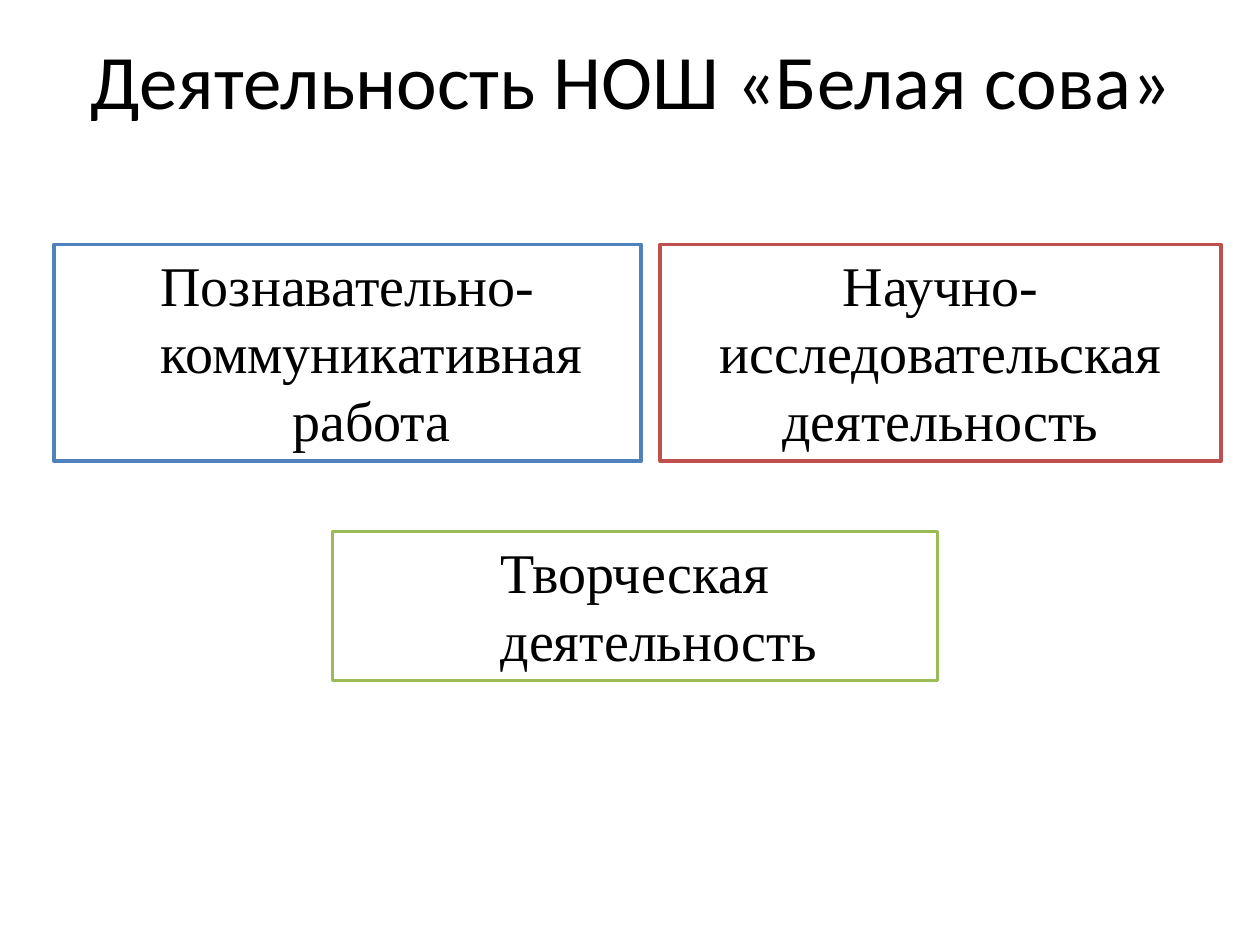
import pptx
import pptx.dml.color
import pptx.enum.shapes
import pptx.enum.text
import pptx.util

Inches = pptx.util.Inches
Pt = pptx.util.Pt

ROW_TOP, ROW_HEIGHT = 1.94, 1.72
HANGING = 0.38

# text, line colour, box (left, top, width, height), hanging indent
ACTIVITIES = [
    ("Научно-исследовательская деятельность", "C0504D",
     (5.24, ROW_TOP, 4.45, ROW_HEIGHT), 0),
    ("Познавательно-коммуникативная работа", "4F81BD",
     (0.43, ROW_TOP, 4.66, ROW_HEIGHT), HANGING),
    ("Творческая деятельность", "9BBB59",
     (2.64, 4.22, 4.8, 1.18), HANGING),
]


def color(value):
    return pptx.dml.color.RGBColor.from_string(value)


def write_text(shape, text, font, size, anchor):
    """Put one centred paragraph in the shape and return it."""
    frame = shape.text_frame
    frame.word_wrap = True
    frame.vertical_anchor = anchor
    para = frame.paragraphs[0]
    para.alignment = pptx.enum.text.PP_ALIGN.CENTER
    span = para.add_run()
    span.text = text
    span.font.name = font
    span.font.size = Pt(size)
    span.font.color.rgb = color("000000")
    return para


def add_title(page, box, text):
    shape = page.shapes.add_textbox(*map(Inches, box))
    write_text(shape, text, "Calibri", 44, pptx.enum.text.MSO_ANCHOR.MIDDLE)


def add_activity(page, box, text, line_color, hanging):
    shape = page.shapes.add_shape(
        pptx.enum.shapes.MSO_SHAPE.RECTANGLE, *map(Inches, box))
    shape.shadow.inherit = False
    shape.fill.solid()
    shape.fill.fore_color.rgb = color("FFFFFF")
    shape.line.color.rgb = color(line_color)
    shape.line.width = Pt(2)
    para = write_text(shape, text, "Times New Roman", 32,
                      pptx.enum.text.MSO_ANCHOR.TOP)
    shape.text_frame.auto_size = pptx.enum.text.MSO_AUTO_SIZE.SHAPE_TO_FIT_TEXT
    if hanging:
        properties = para._p.get_or_add_pPr()
        properties.set("marL", str(Inches(hanging)))
        properties.set("indent", str(-Inches(hanging)))


def main():
    deck = pptx.Presentation()
    deck.slide_width = Inches(10)
    deck.slide_height = Inches(7.5)
    page = deck.slides.add_slide(deck.slide_layouts[6])

    # Heading
    add_title(page, (0.51, 0, 9, 1.25), "Деятельность НОШ «Белая сова»")

    # Framed kinds of activity
    for text, line_color, box, hanging in ACTIVITIES:
        add_activity(page, box, text, line_color, hanging)

    deck.save("out.pptx")


if __name__ == "__main__":
    main()
